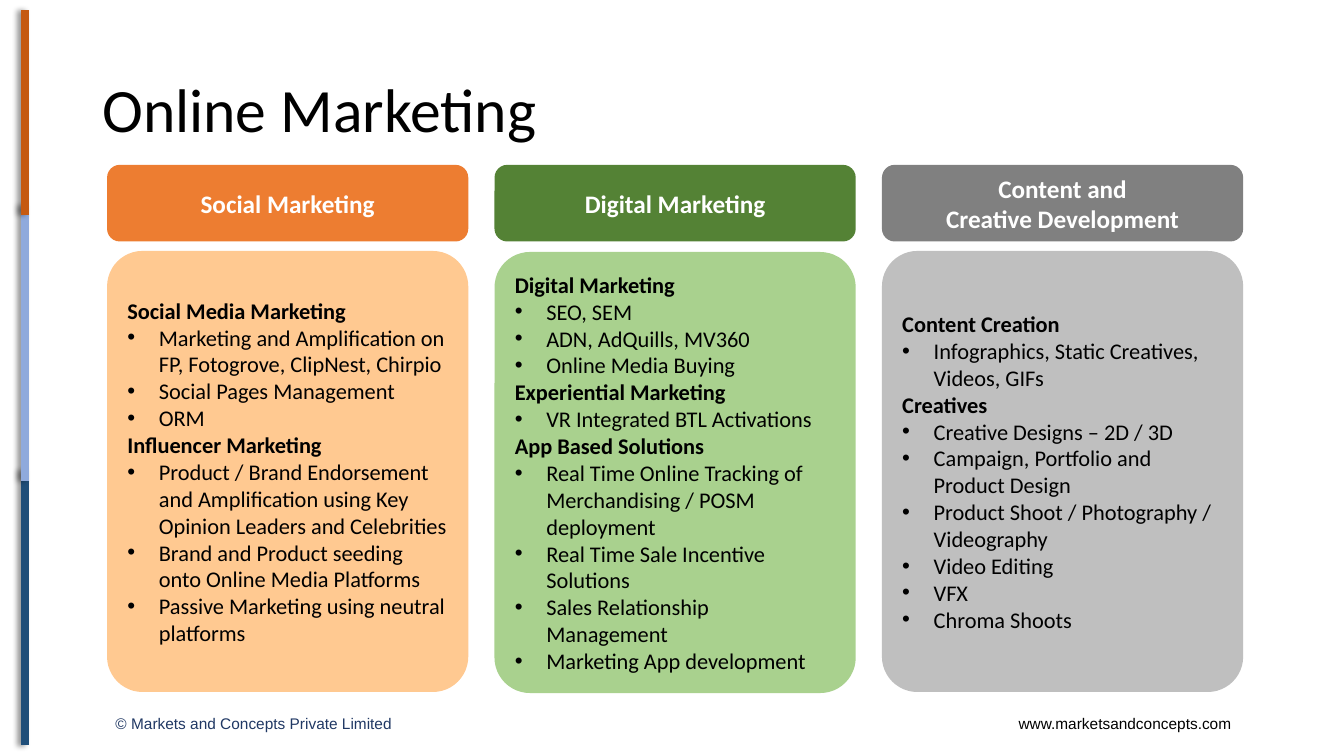
from dataclasses import dataclass

import pptx
import pptx.util
import pptx.dml.color
import pptx.enum.shapes
import pptx.enum.text
import pptx.oxml
import pptx.oxml.ns
import pptx.shapes.autoshape
import pptx.slide
import pptx.text.text

RGBColor = pptx.dml.color.RGBColor
Align = pptx.enum.text.PP_ALIGN
Anchor = pptx.enum.text.MSO_ANCHOR
Kind = pptx.enum.shapes.MSO_SHAPE

SCALE = 9525
BLACK = RGBColor(0x00, 0x00, 0x00)
WHITE = RGBColor(0xFF, 0xFF, 0xFF)
NAVY = RGBColor(0x20, 0x38, 0x64)
BLUE = RGBColor(0x1F, 0x4E, 0x79)
SKY = RGBColor(0x8F, 0xAA, 0xDC)
RUST = RGBColor(0xC5, 0x5A, 0x11)
ORANGE = RGBColor(0xED, 0x7D, 0x31)
PEACH = RGBColor(0xFF, 0xC9, 0x91)
GREEN = RGBColor(0x54, 0x82, 0x35)
LIME = RGBColor(0xA9, 0xD1, 0x8E)
GRAY = RGBColor(0x80, 0x80, 0x80)
SILVER = RGBColor(0xBF, 0xBF, 0xBF)

LEFT, PITCH, WIDTH = 102, 369, 344
HANG = 30
SHADOW = (
    f'<a:effectLst {pptx.oxml.ns.nsdecls("a")}>'
    '<a:outerShdw blurRad="50800" dist="38100" dir="10800000" algn="r" rotWithShape="0">'
    '<a:srgbClr val="000000"><a:alpha val="40000"/></a:srgbClr>'
    '</a:outerShdw></a:effectLst>'
)


@dataclass
class Stripe:
    top: int
    end: int
    color: RGBColor


@dataclass
class Group:
    head: str
    items: list[str]


@dataclass
class Column:
    title: list[str]
    dark: RGBColor
    light: RGBColor
    top: int
    groups: list[Group]


STRIPES = [Stripe(448, 710, BLUE), Stripe(196, 458, SKY), Stripe(10, 205, RUST)]

COLUMNS = [
    Column(["Social Marketing"], ORANGE, PEACH, 239, [
        Group("Social Media Marketing", [
            "Marketing and Amplification on FP, Fotogrove, ClipNest, Chirpio",
            "Social Pages Management",
            "ORM",
        ]),
        Group("Influencer Marketing", [
            "Product / Brand Endorsement and Amplification using Key Opinion Leaders and Celebrities",
            "Brand and Product seeding onto Online Media Platforms",
            "Passive Marketing using neutral platforms",
        ]),
    ]),
    Column(["Digital Marketing"], GREEN, LIME, 240, [
        Group("Digital Marketing", ["SEO, SEM", "ADN, AdQuills, MV360", "Online Media Buying"]),
        Group("Experiential Marketing", ["VR Integrated BTL Activations"]),
        Group("App Based Solutions", [
            "Real Time Online Tracking of Merchandising / POSM deployment",
            "Real Time Sale Incentive Solutions",
            "Sales Relationship Management",
            "Marketing App development",
        ]),
    ]),
    Column(["Content and", "Creative Development"], GRAY, SILVER, 239, [
        Group("Content Creation", ["Infographics, Static Creatives, Videos, GIFs"]),
        Group("Creatives", [
            "Creative Designs – 2D / 3D",
            "Campaign, Portfolio and Product Design",
            "Product Shoot / Photography / Videography",
            "Video Editing",
            "VFX",
            "Chroma Shoots",
        ]),
    ]),
]


def px(num: int) -> pptx.util.Emu:
    return pptx.util.Emu(num * SCALE)


def add_run(para: pptx.text.text._Paragraph, text: str, size: int, color: RGBColor,
            bold: bool = False, face: str = "Calibri") -> None:
    run = para.add_run()
    run.text = text
    run.font.size = pptx.util.Pt(size)
    run.font.name = face
    run.font.bold = bold
    run.font.color.rgb = color


def next_para(frame: pptx.text.text.TextFrame) -> pptx.text.text._Paragraph:
    first = frame.paragraphs[0]
    return frame.add_paragraph() if first.runs else first


def add_bullet(para: pptx.text.text._Paragraph) -> None:
    props = para._p.get_or_add_pPr()
    props.set("marL", str(px(HANG)))
    props.set("indent", str(px(-HANG)))
    for tag, key, value in (("buFont", "typeface", "Arial"), ("buChar", "char", "•")):
        mark = pptx.oxml.parse_xml(f'<a:{tag} {pptx.oxml.ns.nsdecls("a")}/>')
        mark.set(key, value)
        props.append(mark)


def add_card(slide: pptx.slide.Slide, left: int, top: int, height: int,
             fill: RGBColor) -> pptx.shapes.autoshape.Shape:
    card = slide.shapes.add_shape(
        Kind.ROUNDED_RECTANGLE, px(left), px(top), px(WIDTH), px(height))
    card.shadow.inherit = False
    card.fill.solid()
    card.fill.fore_color.rgb = fill
    card.line.fill.background()
    card.text_frame.word_wrap = True
    card.text_frame.vertical_anchor = Anchor.MIDDLE
    return card


def add_column(slide: pptx.slide.Slide, left: int, column: Column) -> None:
    head = add_card(slide, left, 157, 73, column.dark)
    for text in column.title:
        para = next_para(head.text_frame)
        para.alignment = Align.CENTER
        add_run(para, text, 18, WHITE, True)
    body = add_card(slide, left, column.top, 420, column.light)
    body.adjustments[0] = 0.098
    for group in column.groups:
        para = next_para(body.text_frame)
        para.alignment = Align.LEFT
        add_run(para, group.head, 16, BLACK, True)
        for item in group.items:
            para = next_para(body.text_frame)
            para.alignment = Align.LEFT
            add_bullet(para)
            add_run(para, item, 16, BLACK)


def add_stripe(slide: pptx.slide.Slide, stripe: Stripe) -> None:
    line = slide.shapes.add_connector(
        pptx.enum.shapes.MSO_CONNECTOR.STRAIGHT,
        px(24), px(stripe.top), px(24), px(stripe.end))
    line.line.color.rgb = stripe.color
    line.line.width = pptx.util.Pt(6)
    line._element.spPr.append(pptx.oxml.parse_xml(SHADOW))


def add_box(slide: pptx.slide.Slide, top: int, height: int) -> pptx.text.text.TextFrame:
    frame = slide.shapes.add_textbox(px(88), px(top), px(1104), px(height)).text_frame
    frame.word_wrap = True
    return frame


def add_footer(slide: pptx.slide.Slide) -> None:
    frame = add_box(slide, 675, 38)
    frame.margin_left = px(22)
    para = frame.paragraphs[0]
    para._p.get_or_add_pPr().append(pptx.oxml.parse_xml(
        f'<a:tabLst {pptx.oxml.ns.nsdecls("a")}>'
        f'<a:tab pos="{px(1063)}" algn="r"/></a:tabLst>'))
    add_run(para, "© Markets and Concepts Private Limited\t", 11, NAVY, face="Arial")
    add_run(para, "www.marketsandconcepts.com", 11, BLACK, face="Arial")


def add_title(slide: pptx.slide.Slide) -> None:
    frame = add_box(slide, 38, 139)
    frame.vertical_anchor = Anchor.MIDDLE
    para = frame.paragraphs[0]
    para.line_spacing = 0.9
    add_run(para, "Online Marketing", 44, BLACK)


def main() -> None:
    deck = pptx.Presentation()
    deck.slide_width, deck.slide_height = px(1280), px(720)
    slide = deck.slides.add_slide(deck.slide_layouts[6])
    for stripe in STRIPES:
        add_stripe(slide, stripe)
    add_footer(slide)
    add_title(slide)
    for rank, column in enumerate(COLUMNS):
        add_column(slide, LEFT + rank * PITCH, column)
    deck.save("out.pptx")


if __name__ == "__main__":
    main()
